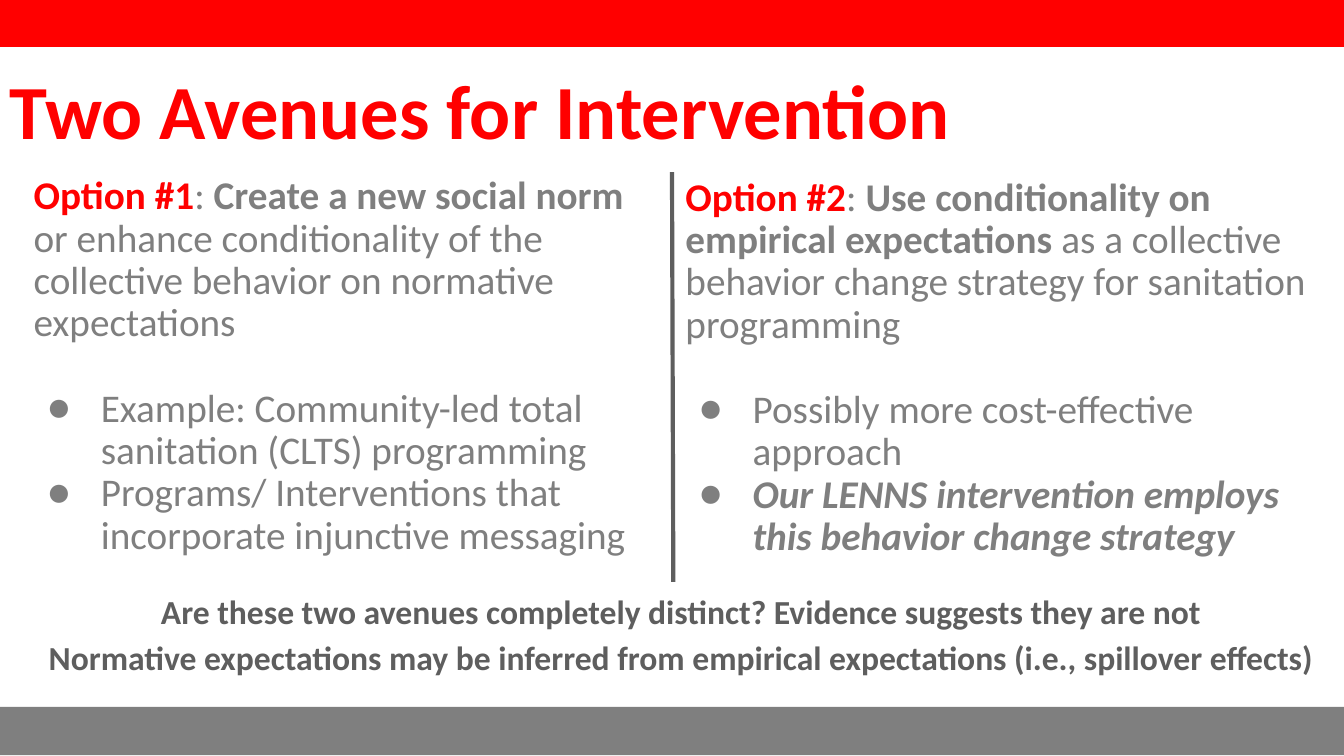
import pptx
import pptx.util
import pptx.dml.color
import pptx.enum.shapes
import pptx.enum.text
import pptx.oxml.ns
from lxml import etree

Inches, Pt = pptx.util.Inches, pptx.util.Pt
Align = pptx.enum.text.PP_ALIGN
COLORS = {"red": "FF0000", "gray": "7F7F7F", "dark": "5E5E5E"}


def color(name):
    return pptx.dml.color.RGBColor.from_string(COLORS[name])


def place(shape, box):
    shape.left, shape.top, shape.width, shape.height = map(Inches, box)


def set_frame(frame, side, edge):
    frame.word_wrap = True
    frame.auto_size = pptx.enum.text.MSO_AUTO_SIZE.NONE
    frame.vertical_anchor = pptx.enum.text.MSO_ANCHOR.TOP
    frame.margin_left = frame.margin_right = Inches(side)
    frame.margin_top = frame.margin_bottom = Inches(edge)


def set_font(para, size, tone, bold=False, italic=False):
    font = para.font
    font.name, font.size = "Calibri", Pt(size)
    font.bold, font.italic = bold, italic
    font.color.rgb = color(tone)


def set_bullet(para, mark=None):
    props = para._p.get_or_add_pPr()
    props.set("marL", str(Inches(0.5 if mark else 0)))
    props.set("indent", str(Inches(-0.4 if mark else 0)))
    qn = pptx.oxml.ns.qn
    if not mark:
        etree.SubElement(props, qn("a:buNone"))
        return
    tint = etree.SubElement(props, qn("a:buClr"))
    etree.SubElement(tint, qn("a:srgbClr"), val=COLORS["gray"])
    etree.SubElement(props, qn("a:buFont"), typeface="Calibri")
    etree.SubElement(props, qn("a:buChar"), char=mark)


def add_band(slide, box, tone):
    band = slide.shapes.add_shape(
        pptx.enum.shapes.MSO_SHAPE.RECTANGLE, *map(Inches, box))
    band.shadow.inherit = False
    band.fill.solid()
    band.fill.fore_color.rgb = color(tone)
    band.line.fill.background()


def fill_title(shape, box, text):
    place(shape, box)
    frame = shape.text_frame
    set_frame(frame, 0.07, 0.04)
    frame.text = text
    para = frame.paragraphs[0]
    para.alignment = Align.LEFT
    set_font(para, 41, "red", bold=True)


def fill_option(shape, box, pads, lead, items):
    """Lead is a list of (text, tone, bold); items of (text, strong)."""
    place(shape, box)
    frame = shape.text_frame
    set_frame(frame, *pads)

    # Lead sentence
    para = frame.paragraphs[0]
    set_bullet(para)
    para.line_spacing, para.space_before = 0.9, Pt(0)
    set_font(para, 21, "gray")
    for text, tone, bold in lead:
        run = para.add_run()
        run.text = text
        run.font.bold = bold
        run.font.color.rgb = color(tone)

    # Bullets, one line below the lead
    for i, (text, strong) in enumerate(items):
        para = frame.add_paragraph()
        set_bullet(para, "●")
        para.line_spacing = 0.9
        para.space_before = Pt(0 if i else 23)
        set_font(para, 21, "gray", strong, strong)
        para.add_run().text = text


def add_rule(slide, start, end):
    rule = slide.shapes.add_connector(
        pptx.enum.shapes.MSO_CONNECTOR.STRAIGHT, *map(Inches, start + end))
    rule.line.color.rgb = color("dark")
    rule.line.width = Pt(2.25)
    etree.SubElement(rule._element.spPr, pptx.oxml.ns.qn("a:effectLst"))


def add_note(slide, box, lines):
    frame = slide.shapes.add_textbox(*map(Inches, box)).text_frame
    set_frame(frame, 0.1, 0.1)
    for i, text in enumerate(lines):
        para = frame.add_paragraph() if i else frame.paragraphs[0]
        para.alignment = Align.CENTER
        para.line_spacing, para.space_before = 0.9, Pt(5 if i else 0)
        set_font(para, 18, "dark", bold=True)
        para.add_run().text = text


def main():
    deck = pptx.Presentation()
    deck.slide_width = Inches(10)
    deck.slide_height = deck.slide_width * 9 // 16
    slide = deck.slides.add_slide(deck.slide_layouts[3])
    title, left, right = slide.placeholders

    # Bands at top and bottom
    add_band(slide, (-0.02, -0.01, 10.04, 0.36), "red")
    add_band(slide, (-0.02, 5.26, 10.02, 0.36), "gray")

    fill_title(title, (0, 0.43, 9.23, 0.76), "Two Avenues for Intervention")

    # Two options with a rule between
    fill_option(
        left, (0.18, 1.27, 4.82, 3.98), (0.07, 0.04),
        [("Option #1", "red", True), (": ", "gray", False),
         ("Create a new social norm", "gray", True),
         (" or enhance conditionality of the collective behavior on "
          "normative expectations", "gray", False)],
        [("Example: Community-led total sanitation (CLTS) programming", False),
         ("Programs/ Interventions that incorporate injunctive messaging",
          False)])
    fill_option(
        right, (5, 1.22, 4.95, 3.07), (0.1, 0.1),
        [("Option #2", "red", True), (": ", "gray", False),
         ("Use conditionality on empirical expectations", "gray", True),
         (" as a collective behavior change strategy for sanitation "
          "programming", "gray", False)],
        [("Possibly more cost-effective approach", False),
         ("Our LENNS intervention employs this behavior change strategy",
          True)])
    add_rule(slide, (5, 1.28), (5.01, 4.33))

    # Closing remarks
    add_note(slide, (0.18, 4.33, 9.78, 0.88), [
        "Are these two avenues completely distinct? "
        "Evidence suggests they are not",
        "Normative expectations may be inferred from empirical expectations "
        "(i.e., spillover effects)"])

    deck.save("out.pptx")


if __name__ == "__main__":
    main()
